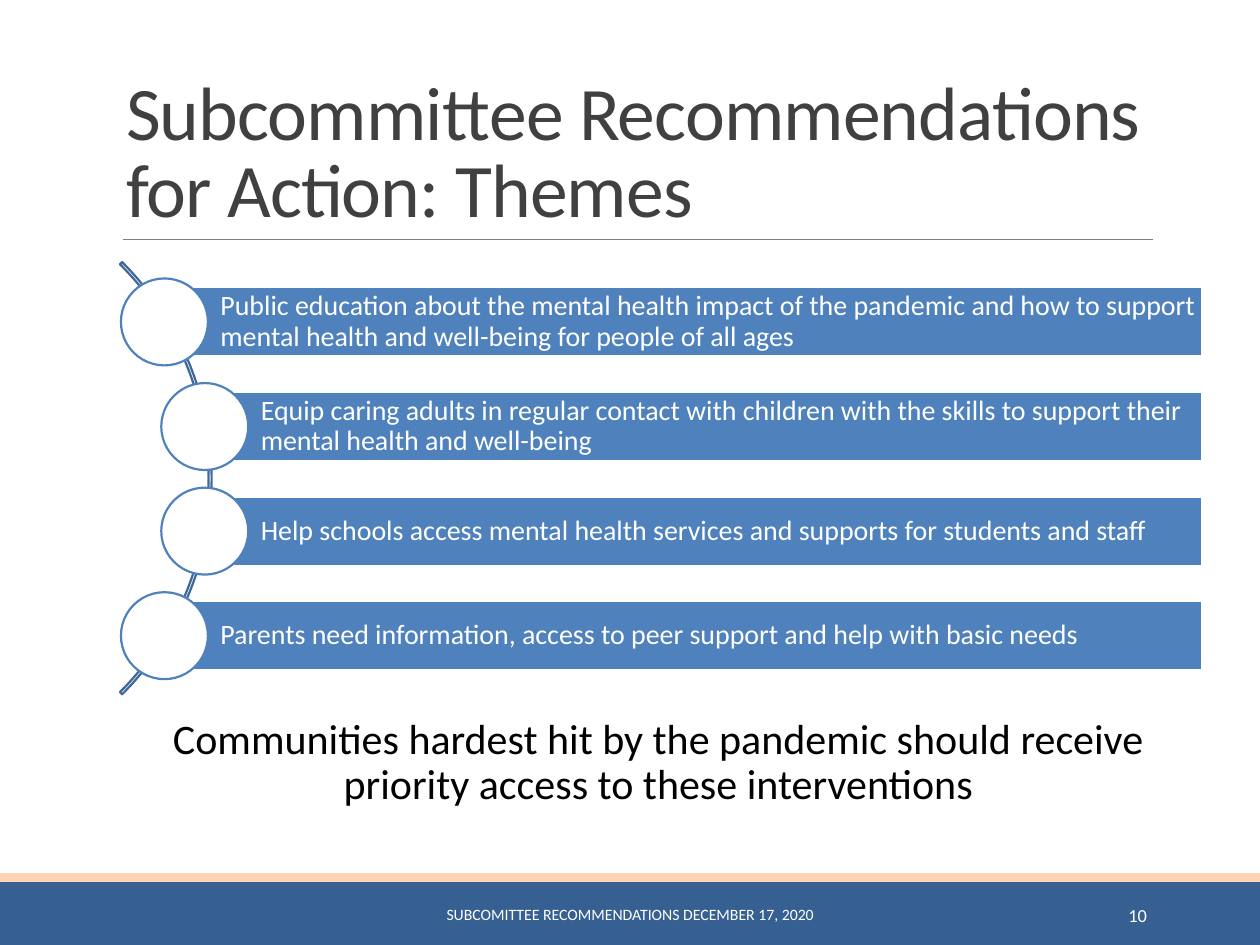
from dataclasses import dataclass

import lxml.etree
import pptx
import pptx.dml.color
import pptx.enum.shapes
import pptx.enum.text
import pptx.oxml.ns
import pptx.util

RGB = pptx.dml.color.RGBColor
SHAPE = pptx.enum.shapes.MSO_SHAPE
ALIGN = pptx.enum.text.PP_ALIGN
ANCHOR = pptx.enum.text.MSO_ANCHOR

WHITE = RGB(0xFF, 0xFF, 0xFF)
BLACK = RGB(0x00, 0x00, 0x00)
NAVY = RGB(0x37, 0x60, 0x92)
PEACH = RGB(0xFC, 0xD5, 0xB5)
GRAY = RGB(0x80, 0x80, 0x80)
INK = RGB(0x40, 0x40, 0x40)
BLUE = RGB(0x4F, 0x81, 0xBD)
ARC = RGB(0x3F, 0x67, 0x97)

SCALE = 9144  # EMU per px, 100 px to the inch
RIGHT = 954  # shared right edge of the bars
TOP, STEP = 228, 83
BAR, DOT = 55, 69


@dataclass
class Box:
    left: int
    top: int
    width: int
    height: int

    def emu(self) -> list[int]:
        return [n * SCALE for n in (self.left, self.top, self.width, self.height)]


@dataclass
class Theme:
    left: int
    text: str


THEMES = [
    Theme(131, "Public education about the mental health impact of the pandemic "
               "and how to support mental health and well-being for people of all ages"),
    Theme(163, "Equip caring adults in regular contact with children "
               "with the skills to support their mental health and well-being"),
    Theme(163, "Help schools access mental health services and supports "
               "for students and staff"),
    Theme(131, "Parents need information, access to peer support and help "
               "with basic needs"),
]


def draw(slide, kind, box: Box, fill=None, line=None):
    shape = slide.shapes.add_shape(kind, *box.emu())
    shape.shadow.inherit = False
    if fill is None:
        shape.fill.background()
    else:
        shape.fill.solid()
        shape.fill.fore_color.rgb = fill
    if line is None:
        shape.line.fill.background()
    else:
        shape.line.color.rgb = line
        shape.line.width = pptx.util.Pt(1.25)
    return shape


def write(shape, text: str, size: float, color: RGB, align=ALIGN.LEFT,
          space: float = 1.0, inset: int = 0, anchor=ANCHOR.MIDDLE) -> None:
    frame = shape.text_frame
    frame.word_wrap = True
    frame.auto_size = pptx.enum.text.MSO_AUTO_SIZE.NONE
    frame.vertical_anchor = anchor
    if inset:
        frame.margin_left = inset * SCALE
        frame.margin_top = frame.margin_right = frame.margin_bottom = 4 * SCALE
    frame.text = text
    para = frame.paragraphs[0]
    para.alignment = align
    para.line_spacing = space
    para.font.name = "Calibri"
    para.font.size = pptx.util.Pt(size)
    para.font.color.rgb = color


def label(slide, box: Box, *args, **style) -> None:
    write(slide.shapes.add_textbox(*box.emu()), *args, **style)


def rule(slide, left: int, right: int, top: int) -> None:
    line = slide.shapes.add_connector(
        pptx.enum.shapes.MSO_CONNECTOR.STRAIGHT,
        left * SCALE, top * SCALE, right * SCALE, top * SCALE)
    line.line.color.rgb = GRAY
    line.line.width = pptx.util.Pt(0.5)
    lxml.etree.SubElement(line._element.spPr, pptx.oxml.ns.qn("a:effectLst"))


def row(slide, theme: Theme, top: int) -> None:
    bar = draw(slide, SHAPE.RECTANGLE,
               Box(theme.left, top, RIGHT - theme.left, BAR), BLUE, WHITE)
    write(bar, theme.text, 16, WHITE, space=0.9, inset=44)
    draw(slide, SHAPE.OVAL,
         Box(theme.left - 35, top - (DOT - BAR) // 2, DOT, DOT), WHITE, BLUE)


def main() -> None:
    deck = pptx.Presentation()
    deck.slide_width, deck.slide_height = 1000 * SCALE, 750 * SCALE
    slide = deck.slides.add_slide(deck.slide_layouts[5])

    # Footer bands and title rule
    draw(slide, SHAPE.RECTANGLE, Box(0, 700, 1000, 50), NAVY)
    draw(slide, SHAPE.RECTANGLE, Box(0, 693, 1000, 7), PEACH)
    rule(slide, 98, 915, 190)

    # Title
    title = slide.shapes.title
    title.left, title.top, title.width, title.height = Box(90, 31, 860, 159).emu()
    write(title, "Subcommittee Recommendations for Action: Themes", 43.2, INK,
          space=0.85, anchor=ANCHOR.BOTTOM)
    run = title.text_frame.paragraphs[0].runs[0]
    run._r.get_or_add_rPr().set("spc", "-50")

    # Arc behind the list of themes
    arc = draw(slide, SHAPE.BLOCK_ARC, Box(-317, 137, 485, 485), line=ARC)
    for i, value in enumerate((189, 27, 0.005)):
        arc.adjustments[i] = value
    for i, theme in enumerate(THEMES):
        row(slide, theme, TOP + i * STEP)

    # Closing note
    label(slide, Box(42, 560, 917, 92),
          "Communities hardest hit by the pandemic should receive "
          "priority access to these interventions",
          24, BLACK, align=ALIGN.CENTER, space=0.9, inset=48)

    # Footer text and page number
    label(slide, Box(302, 706, 396, 40),
          "SUBCOMITTEE RECOMMENDATIONS DECEMBER 17, 2020",
          9, WHITE, align=ALIGN.CENTER)
    label(slide, Box(812, 706, 108, 40), "10", 10.5, WHITE, align=ALIGN.RIGHT)

    deck.save("out.pptx")


if __name__ == "__main__":
    main()
